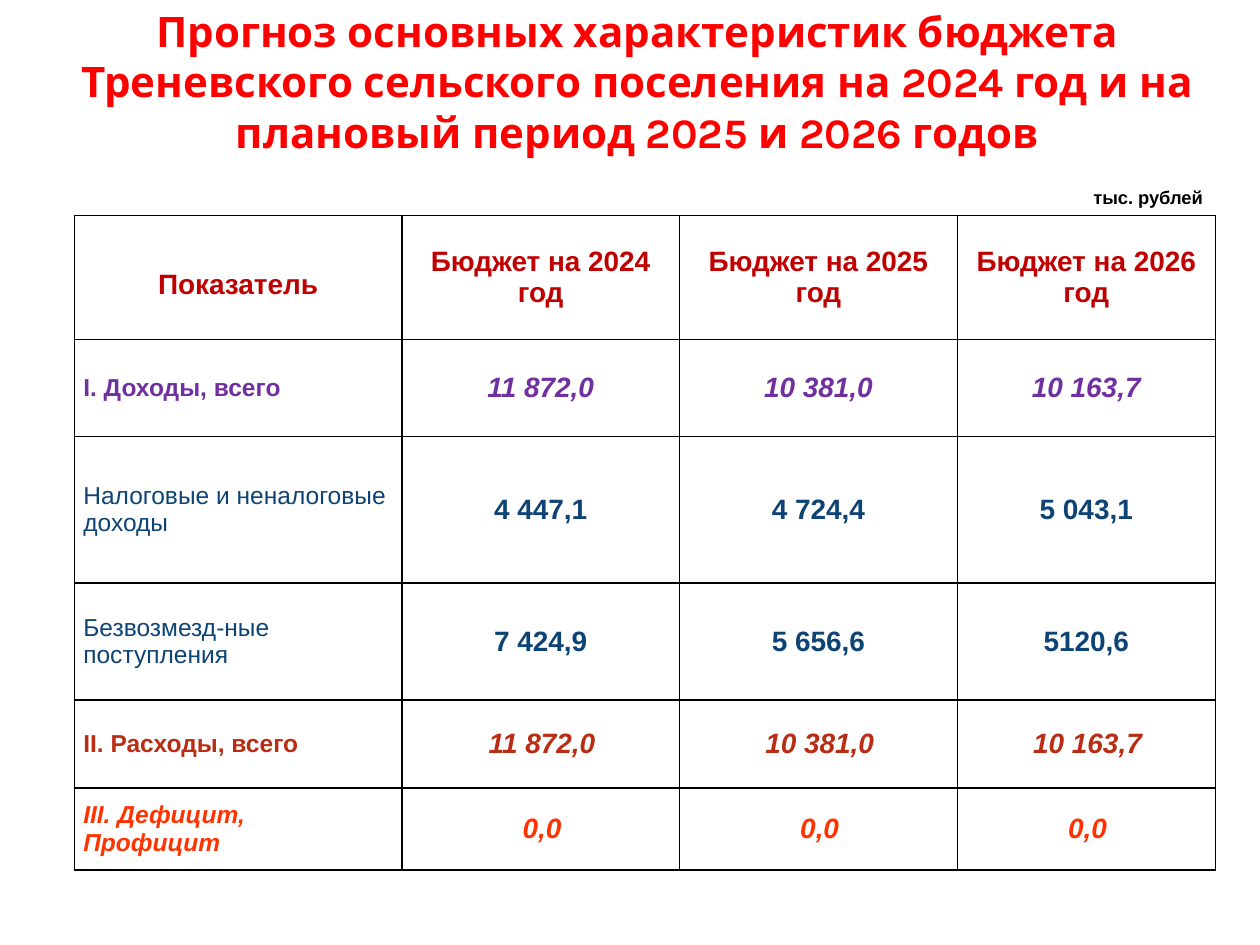
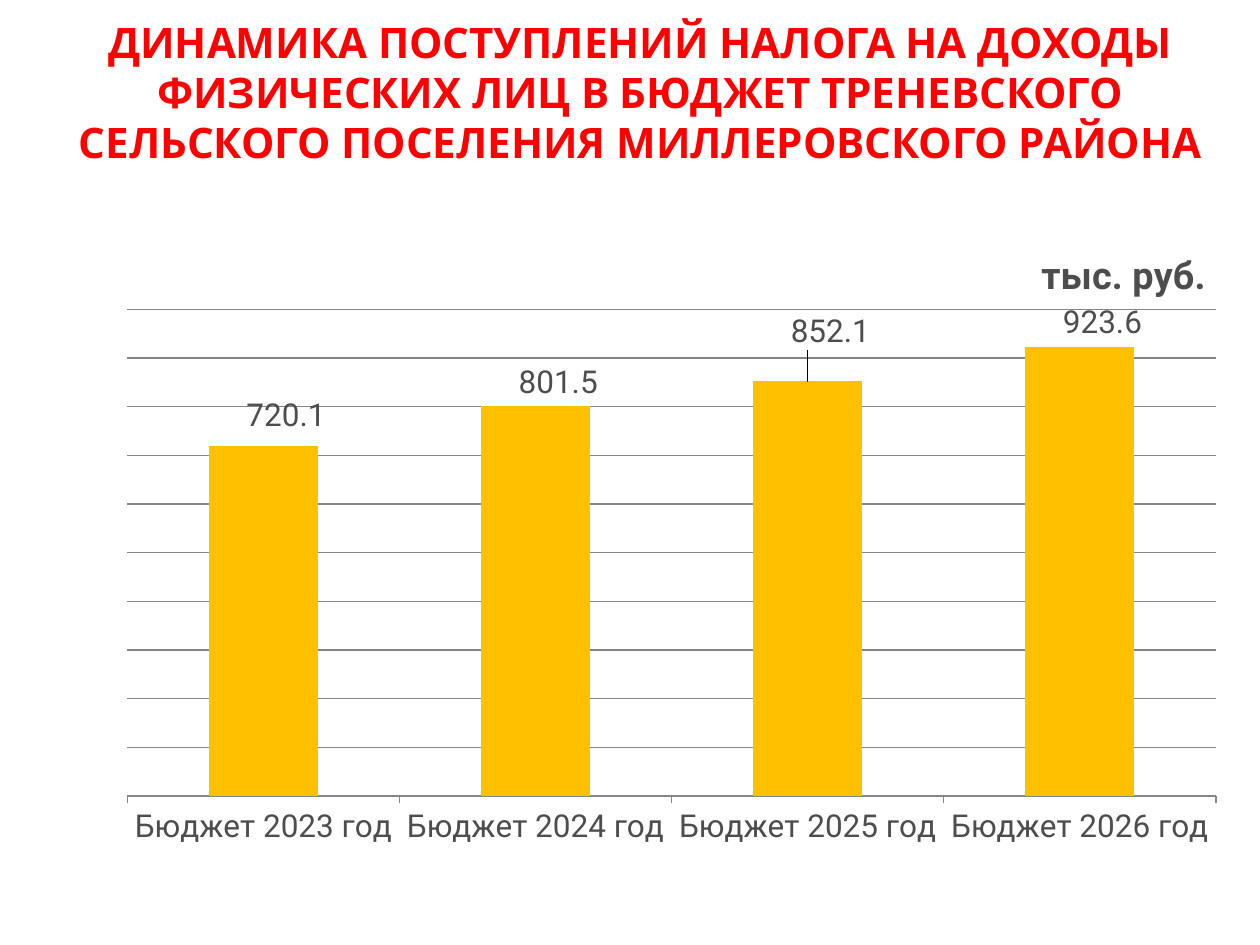
import lxml.etree
import pptx
import pptx.chart.data
import pptx.dml.color
import pptx.enum.chart
import pptx.enum.text
import pptx.oxml.ns
import pptx.util

Cm = pptx.util.Cm
Pt = pptx.util.Pt
RGBColor = pptx.dml.color.RGBColor
Align = pptx.enum.text.PP_ALIGN
Anchor = pptx.enum.text.MSO_ANCHOR
qn = pptx.oxml.ns.qn

RED = RGBColor(0xFF, 0x00, 0x00)
BLACK = RGBColor(0x00, 0x00, 0x00)
GRAY = RGBColor(0x4D, 0x4D, 0x4D)
GRID_GRAY = RGBColor(0x86, 0x86, 0x86)
DARK_RED = RGBColor(0xC0, 0x00, 0x00)
PURPLE = RGBColor(0x70, 0x30, 0xA0)
NAVY = RGBColor(0x0E, 0x44, 0x75)
BRICK = RGBColor(0xB9, 0x2D, 0x14)
ORANGE = RGBColor(0xFF, 0x33, 0x00)
AMBER = RGBColor(0xFF, 0xC0, 0x00)

TITLE_FONT = "Karla"
TABLE_FONT = "Arial"
CHART_FONT = "Roboto"

HEADINGS = ["Показатель", "Бюджет на 2024 год", "Бюджет на 2025 год", "Бюджет на 2026 год"]
COLUMN_WIDTHS = [6.6, 5.6, 5.6, 5.2]
HEADING_HEIGHT = 2.5
HANGING = -0.18
INDENTED = 0.05
BUDGET_ROWS = [
    (1.96, PURPLE, (True, False), (True, True), HANGING,
     ["I. Доходы, всего", "11 872,0", "10 381,0", "10 163,7"]),
    (2.95, NAVY, (False, False), (True, False), HANGING,
     ["Налоговые и неналоговые доходы", "4 447,1", "4 724,4", "5 043,1"]),
    (2.36, NAVY, (False, False), (True, False), HANGING,
     ["Безвозмезд-ные поступления", "7 424,9", "5 656,6", "5120,6"]),
    (1.78, BRICK, (True, False), (True, True), INDENTED,
     ["II. Расходы, всего", "11 872,0", "10 381,0", "10 163,7"]),
    (1.65, ORANGE, (True, True), (True, True), INDENTED,
     ["III. Дефицит,\nПрофицит", "0,0", "0,0", "0,0"]),
]

TAX_BY_YEAR = {2023: 720.1, 2024: 801.5, 2025: 852.1, 2026: 923.6}
LABEL_SHIFTS = [(0.02, -0.01), (0.02, 0), (0.02, -0.04), (0.02, 0)]


class Deck:
    def __init__(self):
        self.presentation = pptx.Presentation()
        self.presentation.slide_width = Cm(25.4)
        self.presentation.slide_height = Cm(19.05)
        self.slide = None

    def add_slide(self):
        self.slide = self.presentation.slides.add_slide(self.presentation.slide_layouts[6])

    def set_font(self, font, name, size, color, bold=False, italic=False):
        font.name = name
        font.size = Pt(size)
        font.bold = bold
        font.italic = italic
        font.color.rgb = color

    def add_text(self, text, box, name, size, color, align, anchor=Anchor.TOP):
        shape = self.slide.shapes.add_textbox(*map(Cm, box))
        shape.text_frame.word_wrap = True
        shape.text_frame.vertical_anchor = anchor
        paragraph = shape.text_frame.paragraphs[0]
        paragraph.text = text
        paragraph.alignment = align
        self.set_font(paragraph.font, name, size, color, bold=True)

    def add_title(self, text, box, anchor=Anchor.TOP):
        self.add_text(text, box, TITLE_FONT, 24, RED, Align.CENTER, anchor)

    def add_table(self, left, top, widths, heights):
        frame = self.slide.shapes.add_table(
            len(heights), len(widths), Cm(left), Cm(top), Cm(sum(widths)), Cm(sum(heights)))
        table = frame.table
        table.first_row = False
        table.horz_banding = False
        for column, width in zip(table.columns, widths):
            column.width = Cm(width)
        for row, height in zip(table.rows, heights):
            row.height = Cm(height)
        return table

    def fill_cell(self, cell, text, size, color, style, align=Align.CENTER, indent=0, spacing=None):
        cell.fill.background()
        cell.vertical_anchor = Anchor.MIDDLE
        cell.margin_left = cell.margin_right = Cm(0.18)
        cell.margin_top = cell.margin_bottom = 0
        cell.text_frame.text = text
        for paragraph in cell.text_frame.paragraphs:
            paragraph.alignment = align
            paragraph.line_spacing = spacing
            properties = paragraph._p.get_or_add_pPr()
            properties.set("marL", "0")
            properties.set("indent", str(Cm(indent)))
            self.set_font(paragraph.font, TABLE_FONT, size, color, *style)
        self.add_borders(cell)

    def add_borders(self, cell):
        properties = cell._tc.get_or_add_tcPr()
        for position, side in enumerate(("a:lnL", "a:lnR", "a:lnT", "a:lnB")):
            line = lxml.etree.Element(qn(side), w=str(Pt(1)))
            fill = lxml.etree.SubElement(line, qn("a:solidFill"))
            lxml.etree.SubElement(fill, qn("a:srgbClr"), val=str(BLACK))
            properties.insert(position, line)

    def set_layout(self, previous, **values):
        parent = previous.getparent()
        for existing in parent.findall(qn("c:layout")):
            parent.remove(existing)
        layout = lxml.etree.Element(qn("c:layout"))
        manual = lxml.etree.SubElement(layout, qn("c:manualLayout"))
        for key, value in values.items():
            lxml.etree.SubElement(manual, qn("c:" + key), val=str(value))
        previous.addnext(layout)

    def add_column_chart(self, box, title, categories, values, label_shifts):
        data = pptx.chart.data.CategoryChartData()
        data.categories = categories
        data.add_series("Series 1", values)
        chart = self.slide.shapes.add_chart(
            pptx.enum.chart.XL_CHART_TYPE.COLUMN_CLUSTERED, *map(Cm, box), data).chart
        self.set_font(chart.font, CHART_FONT, 18, GRAY)
        chart.has_legend = False
        chart.has_title = True
        chart.chart_title.include_in_layout = False
        paragraph = chart.chart_title.text_frame.paragraphs[0]
        paragraph.text = title
        self.set_font(paragraph.font, CHART_FONT, 21.6, GRAY, bold=True)
        self.set_layout(chart.element.find(".//" + qn("c:title")).find(qn("c:tx")),
                        xMode="edge", yMode="edge", x=0.82, y=0.05)
        self.style_axes(chart)
        self.style_columns(chart.plots[0], label_shifts)
        plot_area = chart.element.find(".//" + qn("c:plotArea"))
        anchor = lxml.etree.Element(qn("c:layout"))
        plot_area.insert(0, anchor)
        for existing in plot_area.findall(qn("c:layout"))[1:]:
            plot_area.remove(existing)
        manual = lxml.etree.SubElement(anchor, qn("c:manualLayout"))
        for key, value in dict(layoutTarget="inner", xMode="edge", yMode="edge",
                               x=0.02, y=0.153, w=0.96, h=0.75).items():
            lxml.etree.SubElement(manual, qn("c:" + key), val=str(value))

    def style_axes(self, chart):
        value_axis = chart.value_axis
        value_axis.visible = False
        value_axis.minimum_scale = 0
        value_axis.maximum_scale = 1000
        value_axis.major_unit = 100
        value_axis.has_major_gridlines = True
        category_axis = chart.category_axis
        category_axis.major_tick_mark = pptx.enum.chart.XL_TICK_MARK.OUTSIDE
        for line in (value_axis.major_gridlines.format.line, category_axis.format.line):
            line.color.rgb = GRID_GRAY
            line.width = Pt(0.75)

    def style_columns(self, plot, label_shifts):
        plot.gap_width = 150
        plot.vary_by_categories = False
        series = plot.series[0]
        series.format.fill.solid()
        series.format.fill.fore_color.rgb = AMBER
        labels = series.data_labels
        labels.show_value = True
        self.set_font(labels.font, CHART_FONT, 18, GRAY)
        for number, (x, y) in enumerate(label_shifts):
            label = series.points[number].data_label
            label.position = pptx.enum.chart.XL_LABEL_POSITION.OUTSIDE_END
            self.set_font(label.font, CHART_FONT, 18, GRAY)
            index = labels._element.findall(qn("c:dLbl"))[number].find(qn("c:idx"))
            self.set_layout(index, x=x, y=y)


def add_budget_slide(deck):
    deck.add_slide()
    deck.add_title(
        "Прогноз основных характеристик бюджета Треневского сельского поселения "
        "на 2024 год и на плановый период 2025 и 2026 годов",
        (0.3, 0.53, 25.1, 2.2), Anchor.MIDDLE)
    deck.add_text("тыс. рублей", (20.9, 3.63, 3.6, 0.7), TABLE_FONT, 10.5, BLACK, Align.RIGHT)
    heights = [HEADING_HEIGHT] + [row[0] for row in BUDGET_ROWS]
    table = deck.add_table(1.5, 4.34, COLUMN_WIDTHS, heights)
    for column, heading in enumerate(HEADINGS):
        indent, spacing = (0, None) if column else (HANGING, 1.5)
        deck.fill_cell(table.cell(0, column), heading, 16, DARK_RED, (True, False),
                       indent=indent, spacing=spacing)
    for row, (_, color, name_style, value_style, indent, texts) in enumerate(BUDGET_ROWS, 1):
        deck.fill_cell(table.cell(row, 0), texts[0], 14, color, name_style, Align.LEFT)
        for column, text in enumerate(texts[1:], 1):
            deck.fill_cell(table.cell(row, column), text, 16, color, value_style, indent=indent)


def add_tax_slide(deck):
    deck.add_slide()
    deck.add_title(
        "ДИНАМИКА ПОСТУПЛЕНИЙ НАЛОГА НА ДОХОДЫ\n"
        "ФИЗИЧЕСКИХ ЛИЦ В БЮДЖЕТ ТРЕНЕВСКОГО СЕЛЬСКОГО ПОСЕЛЕНИЯ МИЛЛЕРОВСКОГО РАЙОНА",
        (0.84, 0.2, 24.13, 3.33))
    deck.add_column_chart(
        (2.11, 4.24, 22.86, 13.08), "тыс. руб.",
        [f"Бюджет {year} год" for year in TAX_BY_YEAR], list(TAX_BY_YEAR.values()), LABEL_SHIFTS)


def main():
    deck = Deck()
    add_budget_slide(deck)
    add_tax_slide(deck)
    deck.presentation.save("out.pptx")


if __name__ == "__main__":
    main()
